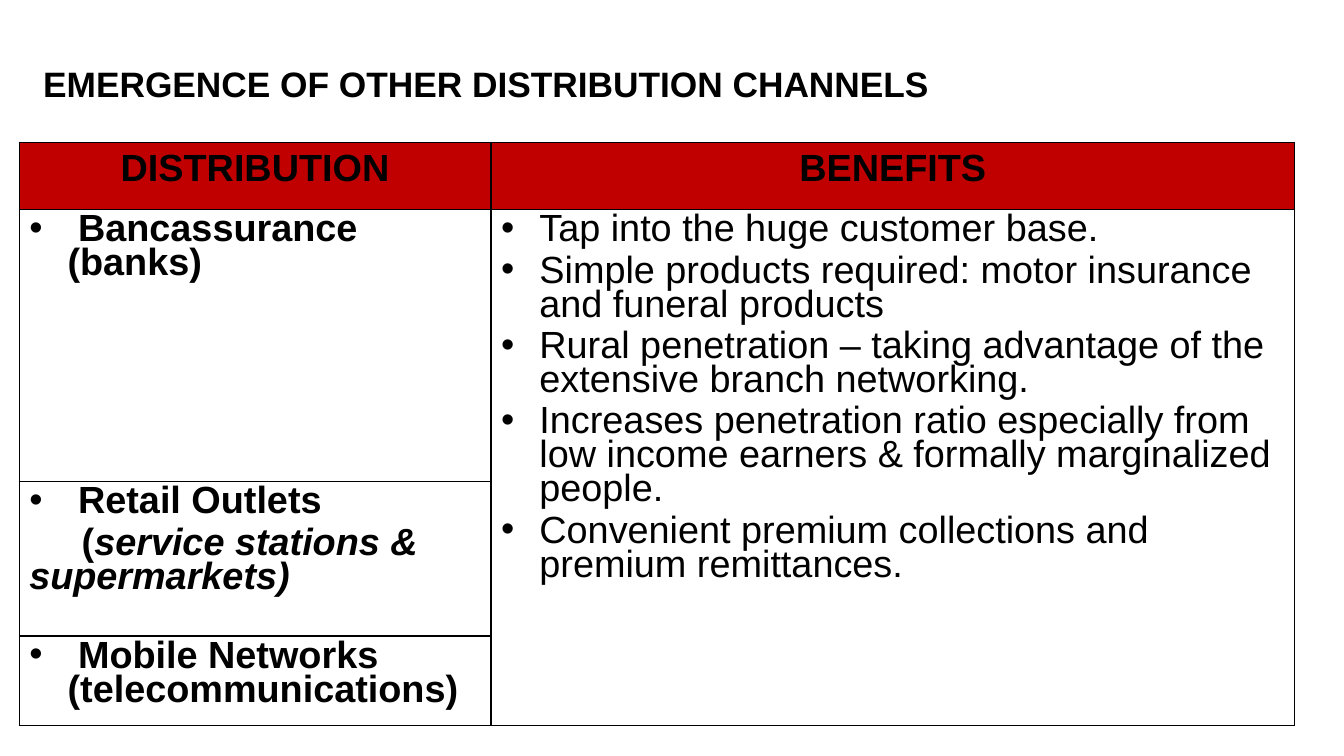
from lxml import etree
from pptx import Presentation
from pptx.dml.color import RGBColor
from pptx.enum.text import MSO_ANCHOR, PP_ALIGN
from pptx.oxml.ns import qn
from pptx.util import Inches, Pt

CENTER = PP_ALIGN.CENTER
BOTTOM = MSO_ANCHOR.BOTTOM
BLACK, WHITE, RED = "000000", "FFFFFF", "C00000"
HANG = 0.38
COLUMNS = [4.68, 7.97]
ROWS = [0.67, 2.7, 1.53, 0.89]
HEADINGS = ["DISTRIBUTION", "BENEFITS"]
CHANNELS = [" Bancassurance (banks)", " Retail Outlets",
            " Mobile Networks (telecommunications)"]
BENEFITS = [
    "Tap into the huge customer base.",
    "Simple products required: motor insurance and funeral products",
    "Rural penetration – taking advantage of the extensive branch networking.",
    "Increases penetration ratio especially from low income earners "
    "& formally marginalized people.",
    "Convenient premium collections and premium remittances.",
]


def rgb(value):
    return RGBColor.from_string(value)


def set_fill(target, color):
    target.fill.solid()
    target.fill.fore_color.rgb = rgb(color)


def add_run(p, text, **formats):
    r = p.add_run()
    r.text = text
    values = {"name": "Arial", "size": Pt(27), "bold": True, **formats}
    for name, value in values.items():
        setattr(r.font, name, value)
    r.font.color.rgb = rgb(BLACK)


def set_indent(p, left, first):
    pPr = p._p.get_or_add_pPr()
    pPr.set("marL", str(Inches(left)))
    pPr.set("indent", str(Inches(first)))
    return pPr


def next_paragraph(tf):
    """Return the first paragraph if still empty, else a new spaced one."""
    p = tf.paragraphs[0]
    if p.runs:
        p = tf.add_paragraph()
        p.space_before = Pt(5.4)
    p.line_spacing = 0.8
    return p


def add_bullet(tf, text, bold):
    p = next_paragraph(tf)
    pPr = set_indent(p, HANG, -HANG)
    etree.SubElement(pPr, qn("a:buFont"), typeface="Arial")
    etree.SubElement(pPr, qn("a:buChar"), char="•")
    add_run(p, text, bold=bold)


def add_borders(cell):
    tcPr = cell._tc.get_or_add_tcPr()
    for side in ("lnL", "lnR", "lnT", "lnB"):
        ln = etree.SubElement(tcPr, qn(f"a:{side}"), w=str(Pt(1)))
        fill = etree.SubElement(ln, qn("a:solidFill"))
        etree.SubElement(fill, qn("a:srgbClr"), val=BLACK)


def add_title(s, text):
    box = s.shapes.add_textbox(Inches(0.33), Inches(0.5), Inches(11), Inches(0.9))
    set_fill(box, WHITE)
    tf = box.text_frame
    tf.word_wrap = True
    tf.vertical_anchor = BOTTOM
    tf.margin_bottom = Inches(0.36)
    add_run(tf.paragraphs[0], text, size=Pt(25.2))


def add_grid(s):
    """Add the bordered table with a red heading row and no body fill."""
    frame = s.shapes.add_table(len(ROWS), len(COLUMNS), Inches(0.19), Inches(1.41),
                               Inches(sum(COLUMNS)), Inches(sum(ROWS)))
    table = frame.table
    table.horz_banding = table.first_row = False
    for column, width in zip(table.columns, COLUMNS):
        column.width = Inches(width)
    for i, height in enumerate(ROWS):
        table.rows[i].height = Inches(height)
        for cell in table.rows[i].cells:
            add_borders(cell)
            if i == 0:
                set_fill(cell, RED)
            else:
                cell.fill.background()
    return table


def main():
    prs = Presentation()
    prs.slide_width, prs.slide_height = Inches(13.33), Inches(7.5)
    s = prs.slides.add_slide(prs.slide_layouts[6])
    add_title(s, "EMERGENCE OF OTHER DISTRIBUTION CHANNELS")

    table = add_grid(s)
    for cell, heading in zip(table.rows[0].cells, HEADINGS):
        p = cell.text_frame.paragraphs[0]
        p.alignment = CENTER
        add_run(p, heading)

    for i, channel in enumerate(CHANNELS, 1):
        add_bullet(table.cell(i, 0).text_frame, channel, True)
    p = next_paragraph(table.cell(2, 0).text_frame)
    set_indent(p, 0, 0.52)
    add_run(p, "(")
    add_run(p, "service stations & supermarkets)", italic=True)

    benefits = table.cell(1, 1)
    benefits.merge(table.cell(3, 1))
    for benefit in BENEFITS:
        add_bullet(benefits.text_frame, benefit, False)
    prs.save("out.pptx")


if __name__ == "__main__":
    main()
